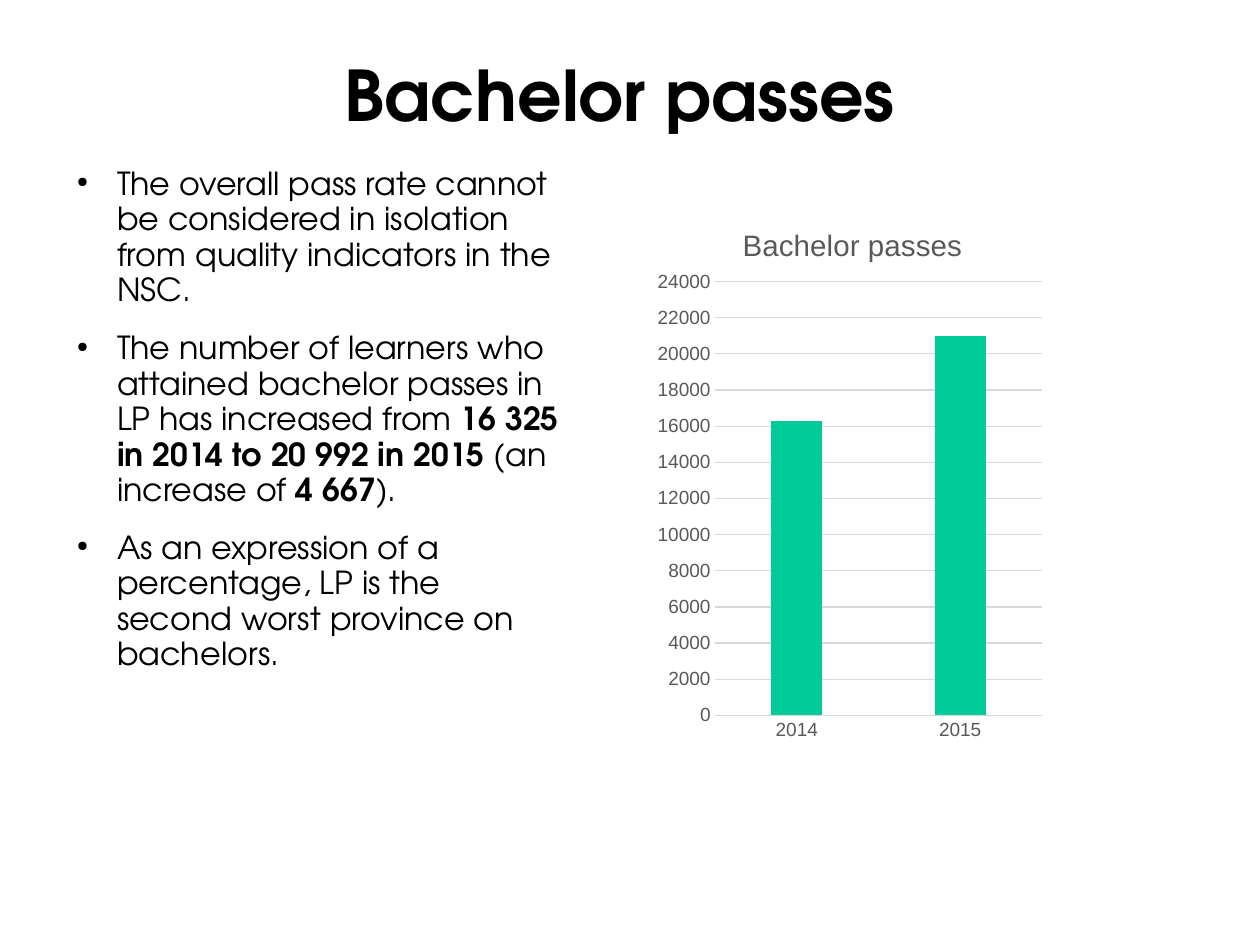
import pptx
import pptx.chart.data
import pptx.dml.color
import pptx.enum.chart
import pptx.enum.text
import pptx.oxml
import pptx.oxml.ns
import pptx.util
from lxml import etree

BLACK = pptx.dml.color.RGBColor(0x00, 0x00, 0x00)
GREY = pptx.dml.color.RGBColor(0x59, 0x59, 0x59)
GRID = pptx.dml.color.RGBColor(0xD9, 0xD9, 0xD9)
GREEN = pptx.dml.color.RGBColor(0x00, 0xCC, 0x99)

POINTS = [
    [("The overall pass rate cannot be considered in isolation from quality indicators in the NSC.", False)],
    [
        ("The number of learners who attained bachelor passes in LP has increased from ", False),
        ("16 325 in 2014 to 20 992 in 2015", True),
        (" (an increase of ", False),
        ("4 667", True),
        (").", False),
    ],
    [("As an expression of a percentage, LP is the second worst province on bachelors.", False)],
]


class SlideBuilder:
    """Holds the style and the current slide, and adds each kind of element."""

    text_font = "TeX Gyre Adventor"
    chart_font = "Arial"
    scale = 8000

    def __init__(self, deck):
        self.slide = deck.slides.add_slide(deck.slide_layouts[5])

    def place(self, *lengths):
        return [pptx.util.Emu(length * self.scale) for length in lengths]

    def style(self, font, name, size, color, bold=False):
        font.name, font.size, font.bold = name, pptx.util.Pt(size), bold
        font.color.rgb = color

    def prepare(self, box, anchor):
        frame = box.text_frame
        frame.margin_left = frame.margin_top = frame.margin_right = frame.margin_bottom = 0
        frame.word_wrap = True
        frame.auto_size = pptx.enum.text.MSO_AUTO_SIZE.NONE
        frame.vertical_anchor = anchor
        return frame

    def title(self, text, *place):
        box = self.slide.shapes.title
        box.left, box.top, box.width, box.height = self.place(*place)
        frame = self.prepare(box, pptx.enum.text.MSO_ANCHOR.MIDDLE)
        frame.text = text
        para = frame.paragraphs[0]
        para.alignment = pptx.enum.text.PP_ALIGN.CENTER
        para.line_spacing = 0.93
        self.style(para.runs[0].font, self.text_font, 44, BLACK, True)

    def bullet(self, para):
        properties = para._p.get_or_add_pPr()
        left, hanging = self.place(54, 40)
        properties.set("marL", str(left))
        properties.set("indent", str(-hanging))
        color = etree.SubElement(properties, pptx.oxml.ns.qn("a:buClr"))
        etree.SubElement(color, pptx.oxml.ns.qn("a:srgbClr"), val=str(BLACK))
        etree.SubElement(properties, pptx.oxml.ns.qn("a:buSzPct"), val="45000")
        etree.SubElement(properties, pptx.oxml.ns.qn("a:buChar"), char="●")

    def bullets(self, points, *place):
        box = self.slide.shapes.add_textbox(*self.place(*place))
        frame = self.prepare(box, pptx.enum.text.MSO_ANCHOR.TOP)
        for index, point in enumerate(points):
            para = frame.add_paragraph() if index else frame.paragraphs[0]
            self.bullet(para)
            para.line_spacing = 0.93
            para.space_after = pptx.util.Pt(14.2)
            for text, bold in point:
                span = para.add_run()
                span.text = text
                self.style(span.font, self.text_font, 20, BLACK, bold)

    def layout(self, parent, position, **parts):
        for old in parent.findall(pptx.oxml.ns.qn("c:layout")):
            parent.remove(old)
        layout = etree.Element(pptx.oxml.ns.qn("c:layout"))
        manual = etree.SubElement(layout, pptx.oxml.ns.qn("c:manualLayout"))
        for name, value in parts.items():
            etree.SubElement(manual, pptx.oxml.ns.qn("c:" + name), val=str(value))
        parent.insert(position, layout)

    def column_chart(self, name, years, passes, *place):
        data = pptx.chart.data.CategoryChartData()
        data.categories = years
        data.add_series(name, passes)
        kind = pptx.enum.chart.XL_CHART_TYPE.COLUMN_CLUSTERED
        chart = self.slide.shapes.add_chart(kind, *self.place(*place), data).chart
        chart.has_legend = False
        self.style(chart.font, self.chart_font, 10, BLACK)
        chart.has_title = True
        chart.chart_title.include_in_layout = False
        heading = chart.chart_title.text_frame
        heading.text = name
        self.style(heading.paragraphs[0].runs[0].font, self.chart_font, 18.6, GREY)
        self.layout(chart.chart_title._element, 1, xMode="edge", yMode="edge", x=0.22, y=0.05)
        self.layout(chart._chartSpace.chart.plotArea, 0, layoutTarget="inner", xMode="edge",
                    yMode="edge", x=0.165, y=0.16, w=0.815, h=0.775)

        plot = chart.plots[0]
        plot.gap_width, plot.overlap, plot.vary_by_categories = 219, -27, False
        fill = plot.series[0].format.fill
        fill.solid()
        fill.fore_color.rgb = GREEN

        for axis in (chart.category_axis, chart.value_axis):
            axis.major_tick_mark = axis.minor_tick_mark = pptx.enum.chart.XL_TICK_MARK.NONE
            self.style(axis.tick_labels.font, self.chart_font, 12, GREY)
        values = chart.value_axis
        values.minimum_scale, values.maximum_scale, values.major_unit = 0, 24000, 2000
        values.format.line.fill.background()
        values.has_major_gridlines = True
        for line in (chart.category_axis.format.line, values.major_gridlines.format.line):
            line.color.rgb = GRID
            line.width = pptx.util.Pt(0.75)


def main():
    deck = pptx.Presentation()
    deck.slide_width, deck.slide_height = (pptx.util.Emu(side * SlideBuilder.scale) for side in (1260, 945))
    page = SlideBuilder(deck)
    page.title("Bachelor passes ", 63, 40, 1133, 117)
    page.bullets(POINTS, 63, 167, 501, 649)
    page.column_chart("Bachelor passes", ["2014", "2015"], [16300, 21000], 649, 192, 401, 560)
    deck.save("out.pptx")


if __name__ == "__main__":
    main()
